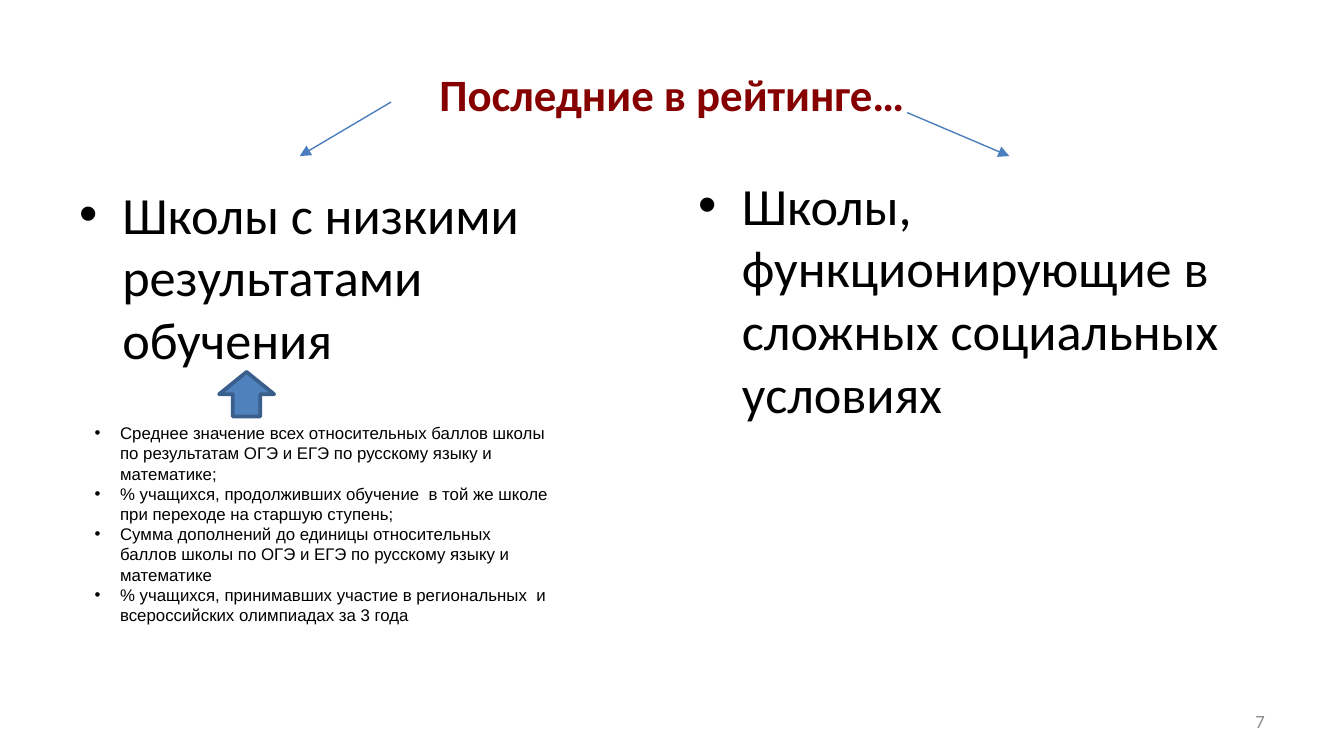
import dataclasses

import lxml.etree
import pptx
import pptx.dml.color
import pptx.enum.shapes
import pptx.enum.text
import pptx.oxml.ns
import pptx.util

ALIGN = pptx.enum.text.PP_ALIGN
ANCHOR = pptx.enum.text.MSO_ANCHOR


@dataclasses.dataclass(frozen=True)
class Theme:
    """Slide size in inches, colours, fonts and type sizes in points."""
    width: float = 10
    height: float = 10 * 9 / 16
    heading_color: str = "860000"
    text_color: str = "000000"
    muted_color: str = "8C8C8C"
    line_color: str = "4B7EBC"
    arrow_fill: str = "4F81BD"
    arrow_edge: str = "3A5F8C"
    main_font: str = "Calibri"
    detail_font: str = "Arial"
    heading_size: int = 24
    group_size: int = 28
    number_size: int = 10
    detail_size: int = 9


THEME = Theme()
CRITERIA = [
    "Среднее значение всех относительных баллов школы по результатам ОГЭ и ЕГЭ по русскому языку и математике;",
    "% учащихся, продолживших обучение  в той же школе при переходе на старшую ступень;",
    "Сумма дополнений до единицы относительных баллов школы по ОГЭ и ЕГЭ по русскому языку и математике",
    "% учащихся, принимавших участие в региональных  и всероссийских олимпиадах за 3 года",
]


def scale(*percents):
    """Turn alternating shares of width and height, in percent, into lengths."""
    sides = (THEME.width, THEME.height)
    return [pptx.util.Inches(share * sides[i % 2] / 100) for i, share in enumerate(percents)]


def rgb(value):
    """Return the colour for a hex string."""
    return pptx.dml.color.RGBColor.from_string(value)


def add_element(parent, tag, **attributes):
    """Append a drawing element to its parent and return it."""
    return lxml.etree.SubElement(parent, pptx.oxml.ns.qn(tag), **attributes)


def set_bullet(para, indent, space_before):
    """Give a paragraph a hanging bullet and a space before it in percent."""
    properties = para._p.get_or_add_pPr()
    offset = pptx.util.Inches(indent)
    properties.set("marL", str(offset))
    properties.set("indent", str(-offset))
    if space_before:
        spacing = add_element(properties, "a:spcBef")
        add_element(spacing, "a:spcPct", val=str(space_before * 1000))
    add_element(properties, "a:buFont", typeface="Arial")
    add_element(properties, "a:buChar", char="•")


def add_text(page, area, paragraphs, *, size, font=THEME.main_font, color=THEME.text_color,
             bold=False, align=ALIGN.LEFT, anchor=ANCHOR.TOP, indent=0, space_before=0,
             margins=(0.09, 0.04)):
    """Add a wrapped text box with one format for all its paragraphs."""
    box = page.shapes.add_textbox(*scale(*area))
    frame = box.text_frame
    frame.word_wrap = True
    frame.vertical_anchor = anchor
    frame.margin_left = frame.margin_right = pptx.util.Inches(margins[0])
    frame.margin_top = frame.margin_bottom = pptx.util.Inches(margins[1])
    for index, text in enumerate(paragraphs):
        para = frame.add_paragraph() if index else frame.paragraphs[0]
        para.alignment = align
        if indent:
            set_bullet(para, indent, space_before)
        span = para.add_run()
        span.text = text
        span.font.name = font
        span.font.size = pptx.util.Pt(size)
        span.font.bold = bold
        span.font.color.rgb = rgb(color)


def add_group(page, left, top, text):
    """Add the large bulleted name of one group of schools."""
    add_text(page, (left, top, 43.2, 66), [text], size=THEME.group_size,
             indent=0.32, space_before=20)


def add_pointer(page, start, end):
    """Add a thin line with an arrowhead at its end."""
    line = page.shapes.add_connector(pptx.enum.shapes.MSO_CONNECTOR.STRAIGHT,
                                     *scale(*start, *end))
    line.line.color.rgb = rgb(THEME.line_color)
    line.line.width = pptx.util.Pt(0.75)
    add_element(line.line._get_or_add_ln(), "a:tailEnd", type="triangle")
    add_element(line._element.spPr, "a:effectLst")


def add_up_arrow(page, area):
    """Add the block arrow that leads from the criteria to their group."""
    arrow = page.shapes.add_shape(pptx.enum.shapes.MSO_SHAPE.UP_ARROW, *scale(*area))
    arrow.shadow.inherit = False
    arrow.fill.solid()
    arrow.fill.fore_color.rgb = rgb(THEME.arrow_fill)
    arrow.line.color.rgb = rgb(THEME.arrow_edge)
    arrow.line.width = pptx.util.Pt(2)


def main():
    """Build the slide and save the deck."""
    deck = pptx.Presentation()
    deck.slide_width, deck.slide_height = scale(100, 100)
    page = deck.slides.add_slide(deck.slide_layouts[6])
    add_text(page, (5, 4.05, 90, 16.7), ["Последние в рейтинге…"], size=THEME.heading_size,
             color=THEME.heading_color, bold=True, align=ALIGN.CENTER, anchor=ANCHOR.MIDDLE)
    add_group(page, 5, 23.35, "Школы с низкими результатами обучения")
    add_text(page, (71.7, 92.7, 23.3, 5.3), ["7"], size=THEME.number_size,
             color=THEME.muted_color, align=ALIGN.RIGHT, anchor=ANCHOR.MIDDLE)
    add_group(page, 51.1, 22.15, "Школы, функционирующие в сложных социальных условиях")
    add_pointer(page, (29.1, 13.5), (22.3, 20.65))
    add_pointer(page, (67.5, 14.9), (75.1, 20.65))
    add_text(page, (6.05, 55.05, 35.8, 31.5), CRITERIA, size=THEME.detail_size,
             font=THEME.detail_font, indent=0.19, margins=(0.1, 0.05))
    add_up_arrow(page, (16.3, 49.2, 4.1, 5.9))
    deck.save("out.pptx")


if __name__ == "__main__":
    main()
